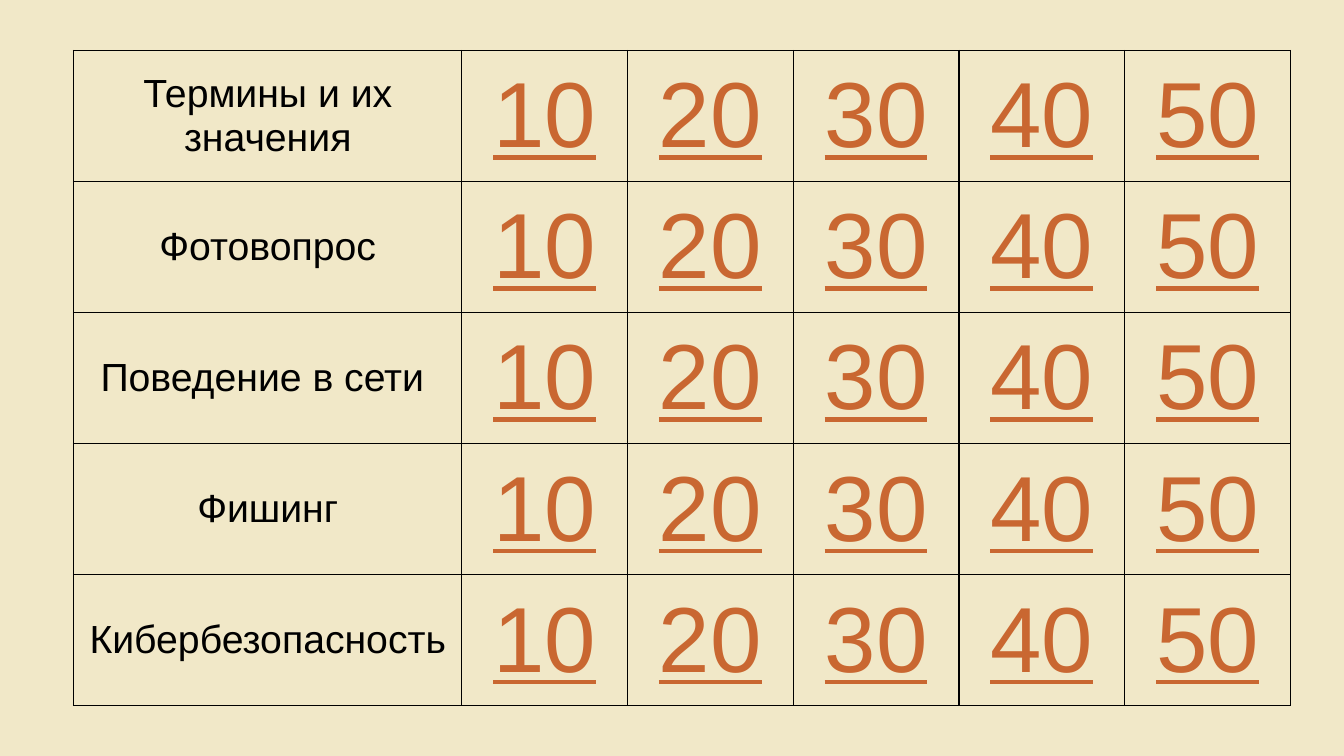
from lxml import etree
from pptx import Presentation
from pptx.dml.color import RGBColor
from pptx.enum.text import MSO_ANCHOR, PP_ALIGN
from pptx.oxml.ns import qn
from pptx.util import Inches, Pt

MIDDLE = MSO_ANCHOR.MIDDLE
CENTER = PP_ALIGN.CENTER
FONT = "Arial"
COLORS = {"back": "F1E8C8", "topic": "000000", "score": "C96731", "line": "000000"}
TOPICS = [
    "Термины и их значения",
    "Фотовопрос",
    "Поведение в сети ",
    "Фишинг",
    "Кибербезопасность",
]
SCORES = [10, 20, 30, 40, 50]
TOPIC_WIDTH = 3.85


def write(cell, text, size, color, under=False):
    cell.vertical_anchor = MIDDLE
    para = cell.text_frame.paragraphs[0]
    para.alignment = CENTER
    run = para.add_run()
    run.text = text
    font = run.font
    font.name = FONT
    font.size = Pt(size)
    font.underline = under
    font.color.rgb = RGBColor.from_string(COLORS[color])


def outline(cell):
    """Clear the cell's fill and draw a thin line on all four sides."""
    cell.fill.background()
    props = cell._tc.get_or_add_tcPr()
    for spot, side in enumerate(("lnL", "lnR", "lnT", "lnB")):
        line = etree.Element(qn(f"a:{side}"), w=str(Pt(1)))
        fill = etree.SubElement(line, qn("a:solidFill"))
        etree.SubElement(fill, qn("a:srgbClr"), val=COLORS["line"])
        props.insert(spot, line)


def add_board(slide, left, top, width, height):
    """Quiz board: a topic in each row, followed by its scores."""
    frame = slide.shapes.add_table(
        len(TOPICS), len(SCORES) + 1,
        Inches(left), Inches(top), Inches(width), Inches(height),
    )
    table = frame.table
    table.first_row = table.horz_banding = False
    widths = [TOPIC_WIDTH] + [(width - TOPIC_WIDTH) / len(SCORES)] * len(SCORES)
    for column, span in zip(table.columns, widths):
        column.width = Inches(span)
    for row, topic in zip(table.rows, TOPICS):
        row.height = Inches(height / len(TOPICS))
        first, *others = row.cells
        write(first, topic, size=28, color="topic")
        for cell, score in zip(others, SCORES):
            write(cell, str(score), size=66, color="score", under=True)
        for cell in row.cells:
            outline(cell)


def main():
    deck = Presentation()
    deck.slide_width, deck.slide_height = Inches(13.33), Inches(7.5)
    slide = deck.slides.add_slide(deck.slide_layouts[6])
    back = slide.background.fill
    back.solid()
    back.fore_color.rgb = RGBColor.from_string(COLORS["back"])
    add_board(slide, 0.73, 0.5, 12.07, 6.5)
    deck.save("out.pptx")


if __name__ == "__main__":
    main()
